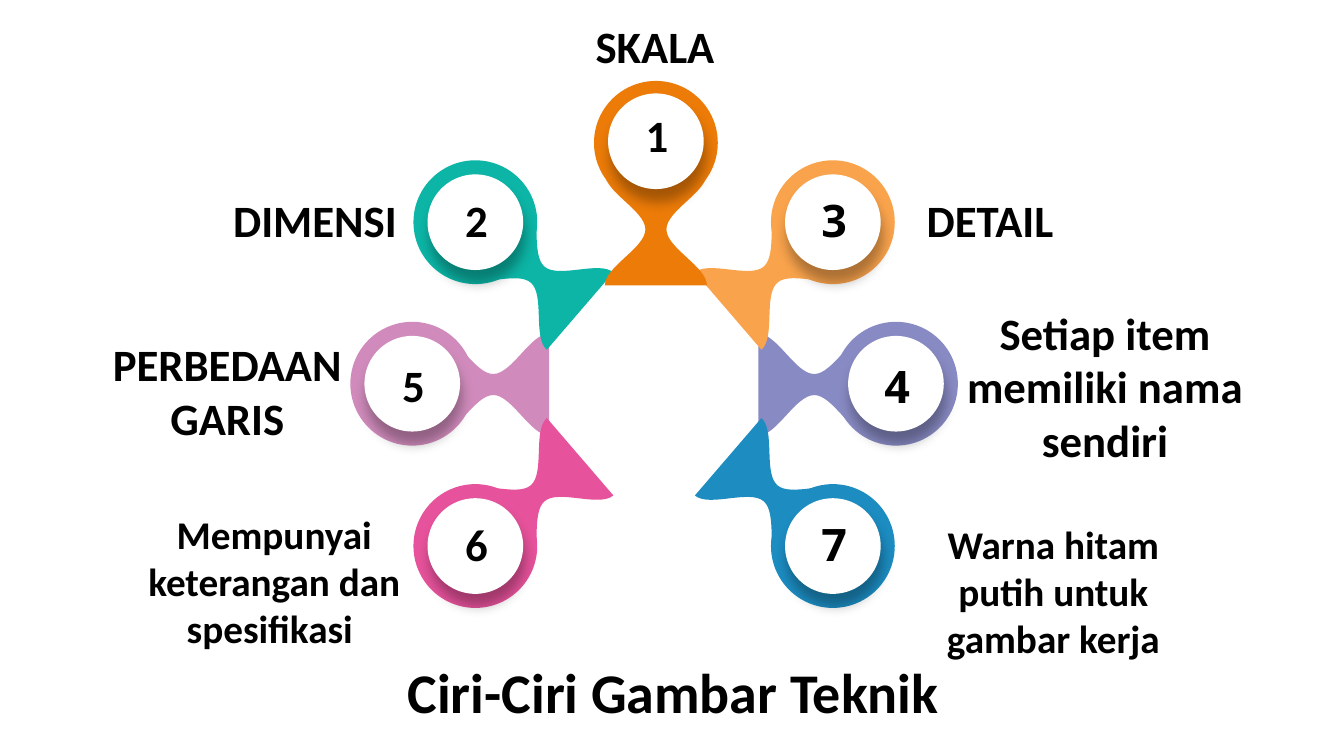
from dataclasses import dataclass

from lxml import etree
from pptx import Presentation
from pptx import util as u
from pptx.dml.color import RGBColor
from pptx.enum import shapes, text
from pptx.oxml.ns import qn

RING, DISC = 3.12, 2.41            # diameters, cm
NECK_W, NECK_H, WAIST = 2.57, 2.82, 0.53
NUMBER_W, NUMBER_H = 2.64, 1.63
PLAIN = "Calibri"
ALT = "Open Sans"


@dataclass
class Petal:
    number: str
    color: str
    ring: tuple[float, float]      # centres, cm
    neck: tuple[float, float]
    angle: float
    font: str = PLAIN
    disc_dy: float = 0.0
    number_dy: float = -0.07


@dataclass
class Label:
    lines: list[str]
    box: tuple[float, float, float, float]   # left, top, width, height, cm
    size: int = 32
    font: str = PLAIN
    anchor: text.MSO_ANCHOR = text.MSO_ANCHOR.BOTTOM
    inset: tuple[float, float] = (0, 0.13)
    fit: text.MSO_AUTO_SIZE = text.MSO_AUTO_SIZE.SHAPE_TO_FIT_TEXT


PETALS = [
    Petal("5", "D08BBC", (10.39, 9.67), (12.43, 9.69), 90, number_dy=0.01),
    Petal("6", "E6529B", (11.98, 13.76), (13.55, 12.43), 49.3),
    Petal("2", "0CB5A6", (11.98, 5.6), (13.55, 6.92), 310.7, number_dy=-0.08),
    Petal("4", "888AC3", (22.58, 9.67), (20.52, 9.69), 270, ALT, number_dy=0.03),
    Petal("7", "1C8CC1", (20.99, 13.76), (19.42, 12.43), 310.7, ALT),
    Petal("3", "F9A34C", (20.99, 5.6), (19.42, 6.92), 49.3, ALT),
    Petal("1", "EC7B08", (16.53, 3.6), (16.53, 5.78), 0,
          disc_dy=-0.04, number_dy=-0.22),
]

SMALL = {"size": 28, "anchor": text.MSO_ANCHOR.TOP, "inset": (0.25, 0.13)}
LABELS = [
    Label(["Ciri-Ciri Gambar Teknik"], (9.75, 16.43, 14.43, 1.98), 40,
          anchor=text.MSO_ANCHOR.MIDDLE, inset=(0.33, 0.18),
          fit=text.MSO_AUTO_SIZE.NONE),
    Label(["SKALA"], (14.68, 0.33, 3.66, 1.63)),
    Label(["DIMENSI"], (5.35, 4.72, 5.18, 1.63)),
    Label(["DETAIL"], (22.36, 4.7, 5.18, 1.63)),
    Label(["PERBEDAAN", "GARIS"], (2.53, 8.33, 6.4, 3)),
    Label(["Setiap item memiliki nama sendiri"], (23.95, 7.52, 7.8, 4.37)),
    Label(["Mempunyai keterangan dan spesifikasi "], (3.29, 12.73, 7.24, 3.84), **SMALL),
    Label(["Warna hitam putih untuk gambar kerja"], (22.75, 12.98, 7.59, 3.84), **SMALL),
]


def rgb(color: str) -> RGBColor:
    return RGBColor.from_string(color)


def paint(sp, color: str) -> None:
    sp.shadow.inherit = False
    sp.fill.solid()
    sp.fill.fore_color.rgb = rgb(color)
    sp.line.fill.background()


def curve_slanted_sides(sp) -> None:
    """Turn each slanted segment into an S-curve with upright ends."""
    outline = sp._element.spPr.find(".//" + qn("a:path"))
    x0 = y0 = 0
    for segment in list(outline):
        pt = segment.find(qn("a:pt"))
        if pt is None:
            continue
        x, y = int(pt.get("x")), int(pt.get("y"))
        if segment.tag == qn("a:lnTo") and x != x0 and y != y0:
            third = (y - y0) // 3
            segment.tag = qn("a:cubicBezTo")
            for i, (px, py) in enumerate([(x0, y0 + third), (x, y - third)]):
                control = etree.Element(qn("a:pt"), x=str(px), y=str(py))
                segment.insert(i, control)
        x0, y0 = x, y


def add_neck(sl, petal: Petal) -> None:
    cx, cy = petal.neck
    half, end, waist = NECK_W / 2, NECK_H / 2, WAIST / 2
    corners = [(-half, -end), (half, -end), (waist, 0), (half, end),
               (-half, end), (-waist, 0), (-half, -end)]
    points = [(u.Cm(cx + x), u.Cm(cy + y)) for x, y in corners]
    fb = sl.shapes.build_freeform(*points[0])
    fb.add_line_segments(points[1:], close=True)
    sp = fb.convert_to_shape()
    curve_slanted_sides(sp)
    sp.rotation = petal.angle
    paint(sp, petal.color)


def add_circle(sl, cx: float, cy: float, diameter: float, color: str):
    sp = sl.shapes.add_shape(
        shapes.MSO_SHAPE.OVAL, u.Cm(cx - diameter / 2), u.Cm(cy - diameter / 2),
        u.Cm(diameter), u.Cm(diameter))
    paint(sp, color)
    return sp


def cast_shadow(sp) -> None:
    effects = sp._element.spPr.find(qn("a:effectLst"))
    shadow = etree.SubElement(
        effects, qn("a:outerShdw"), blurRad=str(u.Pt(9)), dist=str(u.Pt(9)),
        dir=str(80 * 60000), rotWithShape="0")
    tint = etree.SubElement(shadow, qn("a:srgbClr"), val="000000")
    etree.SubElement(tint, qn("a:alpha"), val="29000")


def add_label(sl, label: Label) -> None:
    tf = sl.shapes.add_textbox(*map(u.Cm, label.box)).text_frame
    side, top = map(u.Cm, label.inset)
    frame = {"word_wrap": True, "auto_size": label.fit,
             "vertical_anchor": label.anchor, "margin_left": side,
             "margin_right": side, "margin_top": top, "margin_bottom": top}
    for name, value in frame.items():
        setattr(tf, name, value)
    for i, line in enumerate(label.lines):
        p = tf.add_paragraph() if i else tf.paragraphs[0]
        p.alignment = text.PP_ALIGN.CENTER
        r = p.add_run()
        r.text = line
        for name, value in {"name": label.font, "size": u.Pt(label.size),
                            "bold": True}.items():
            setattr(r.font, name, value)
        r.font.color.rgb = rgb("000000")


def add_petal(sl, petal: Petal) -> None:
    cx, cy = petal.ring
    add_neck(sl, petal)
    add_circle(sl, cx, cy, RING, petal.color)
    cast_shadow(add_circle(sl, cx, cy + petal.disc_dy, DISC, "FFFFFF"))
    box = (cx + 0.03 - NUMBER_W / 2, cy + petal.number_dy - NUMBER_H / 2,
           NUMBER_W, NUMBER_H)
    add_label(sl, Label([petal.number], box, font=petal.font))


def main() -> None:
    prs = Presentation()
    prs.slide_width, prs.slide_height = u.Cm(33.87), u.Cm(19.05)
    sl = prs.slides.add_slide(prs.slide_layouts[6])
    # Numbered petals, back to front
    for petal in PETALS:
        add_petal(sl, petal)
    # Title and captions
    for label in LABELS:
        add_label(sl, label)
    prs.save("out.pptx")


if __name__ == "__main__":
    main()
